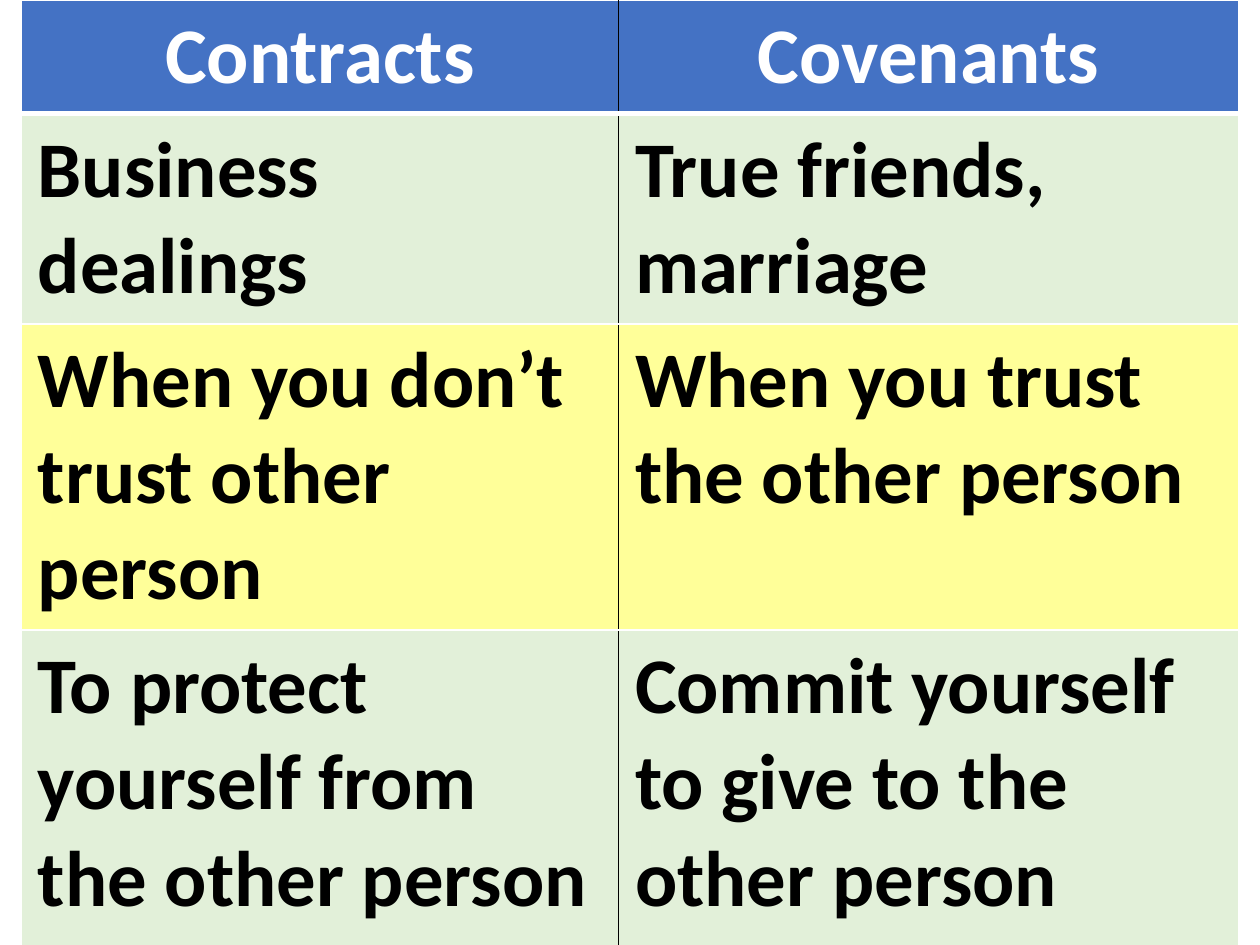
from dataclasses import dataclass

from lxml.etree import SubElement
from pptx import Presentation
from pptx.dml.color import RGBColor
from pptx.enum.text import PP_ALIGN
from pptx.oxml.ns import qn
from pptx.table import _Cell
from pptx.util import Inches, Pt

WHITE = RGBColor(0xFF, 0xFF, 0xFF)
BLACK = RGBColor(0x00, 0x00, 0x00)
BLUE = RGBColor(0x44, 0x72, 0xC4)
GREEN = RGBColor(0xE2, 0xF0, 0xD9)
YELLOW = RGBColor(0xFF, 0xFF, 0x99)


@dataclass(frozen=True)
class ComparisonRow:
    contract: str
    covenant: str
    height: float
    fill: RGBColor
    text_color: RGBColor = BLACK
    align: PP_ALIGN = PP_ALIGN.LEFT
    rule_above: float = 1
    rule_below: float = 1


COMPARISON = [
    ComparisonRow("Contracts", "Covenants", 0.76, BLUE, WHITE, PP_ALIGN.CENTER, rule_below=3),
    ComparisonRow("Business dealings", "True friends, marriage", 1.38, GREEN, rule_above=3),
    ComparisonRow("When you don’t trust other person", "When you trust the other person", 2, YELLOW),
    ComparisonRow(
        "To protect yourself from the other person",
        "Commit yourself to give to the other person",
        2.62,
        GREEN,
    ),
]
COLUMN_WIDTHS = [4.74, 4.92]


def draw_border(cell: _Cell, side: str, color: RGBColor, points: float) -> None:
    properties = cell._tc.get_or_add_tcPr()
    line = SubElement(properties, qn(f"a:ln{side}"), w=str(Pt(points)))
    SubElement(SubElement(line, qn("a:solidFill")), qn("a:srgbClr"), val=str(color))


def fill_cell(cell: _Cell, text: str, row: ComparisonRow, left: RGBColor, right: RGBColor) -> None:
    cell.margin_left = cell.margin_right = Inches(0.13)
    cell.margin_top = cell.margin_bottom = Inches(0.07)
    draw_border(cell, "L", left, 1)
    draw_border(cell, "R", right, 1)
    draw_border(cell, "T", WHITE, row.rule_above)
    draw_border(cell, "B", WHITE, row.rule_below)
    cell.fill.solid()
    cell.fill.fore_color.rgb = row.fill
    cell.text = text
    paragraph = cell.text_frame.paragraphs[0]
    paragraph.alignment = row.align
    paragraph.font.name = "Calibri"
    paragraph.font.size = Pt(45)
    paragraph.font.bold = True
    paragraph.font.color.rgb = row.text_color


def main() -> None:
    presentation = Presentation()
    presentation.slide_width = Inches(10)
    presentation.slide_height = Inches(7.5)
    slide = presentation.slides.add_slide(presentation.slide_layouts[6])
    comparison = slide.shapes.add_table(
        len(COMPARISON), len(COLUMN_WIDTHS), Inches(0.17), Inches(0),
        Inches(sum(COLUMN_WIDTHS)), Inches(sum(row.height for row in COMPARISON)),
    ).table
    for column, width in zip(comparison.columns, COLUMN_WIDTHS):
        column.width = Inches(width)
    for index, row in enumerate(COMPARISON):
        comparison.rows[index].height = Inches(row.height)
        fill_cell(comparison.cell(index, 0), row.contract, row, WHITE, BLACK)
        fill_cell(comparison.cell(index, 1), row.covenant, row, BLACK, WHITE)
    presentation.save("out.pptx")


if __name__ == "__main__":
    main()
